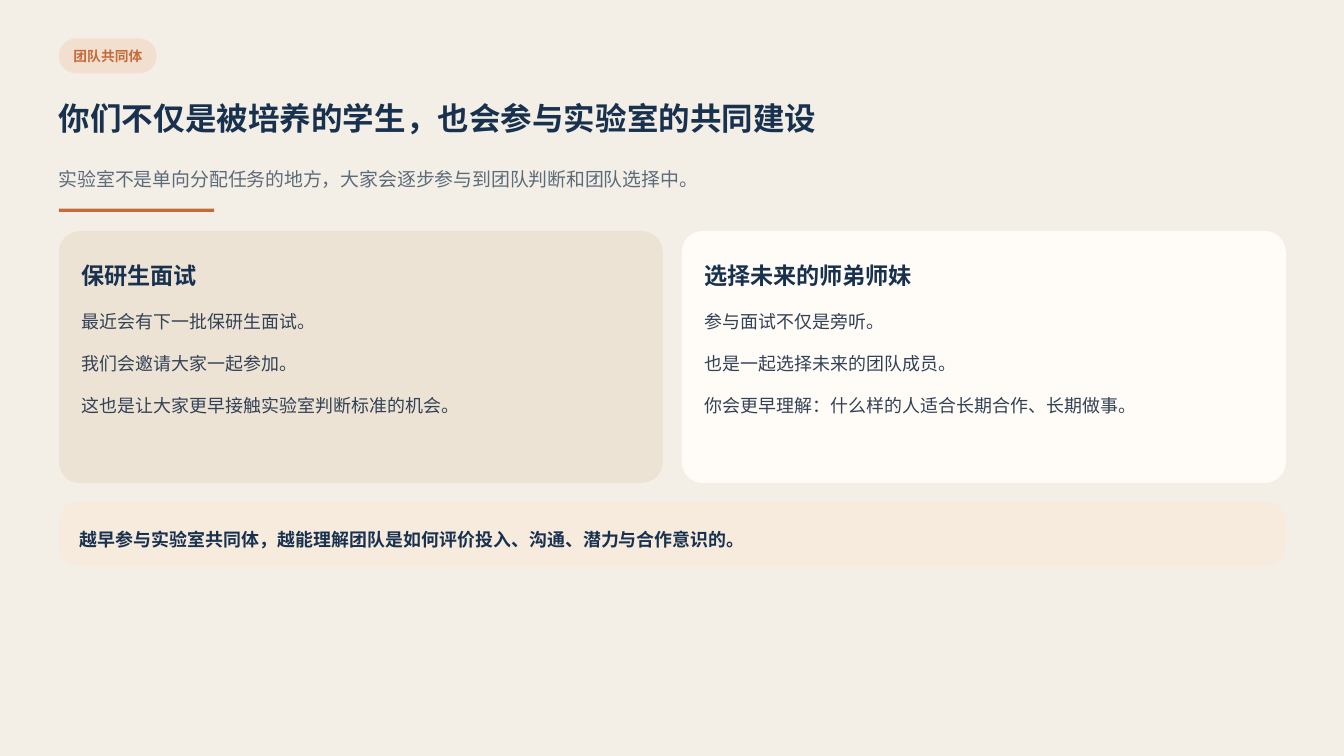
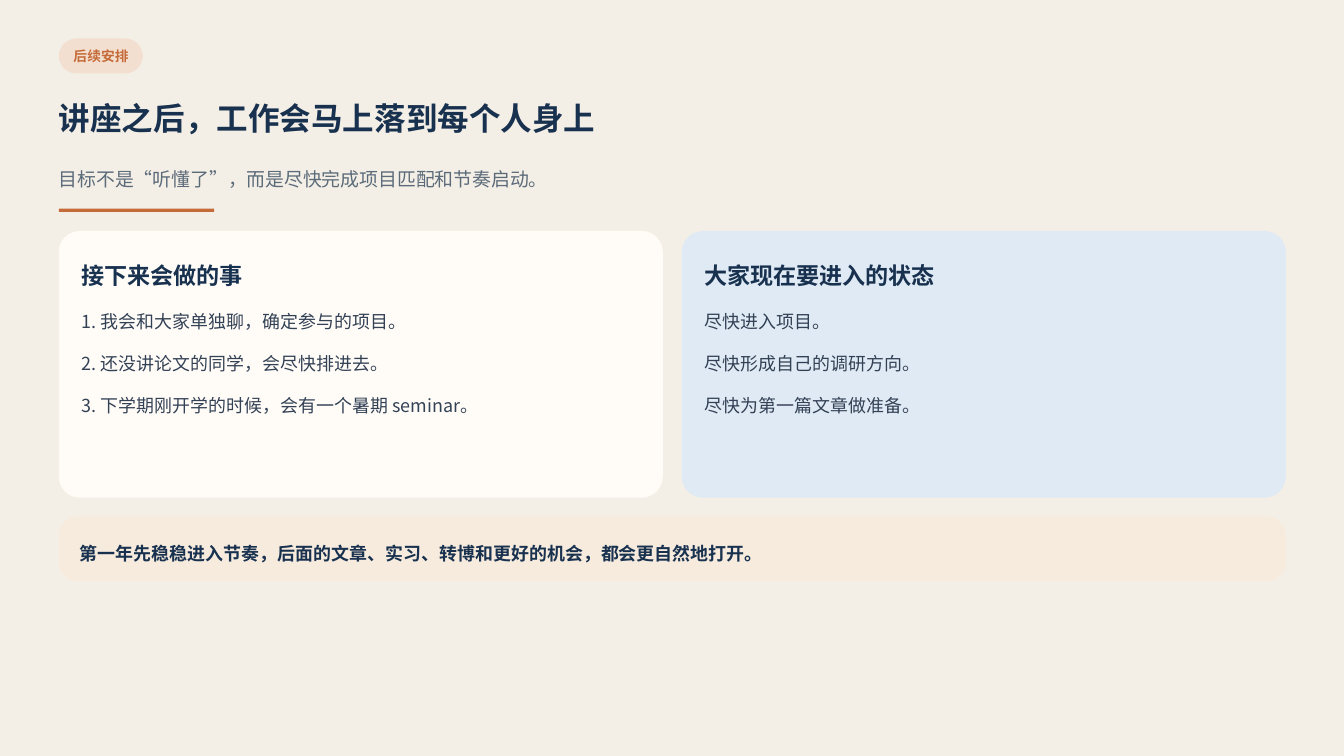
from pptx import Presentation
from pptx.dml.color import RGBColor
from pptx.enum.shapes import MSO_SHAPE
from pptx.oxml.ns import qn
from pptx.util import Pt
from lxml import etree

RECT = MSO_SHAPE.RECTANGLE
ROUND = MSO_SHAPE.ROUNDED_RECTANGLE
PX = 6350
FONT = "Noto Sans CJK SC"
COLORS = {
    "bg": "F4EFE6", "accent": "C56B39", "tag": "F3DFD0", "navy": "18314F",
    "muted": "5C6B7A", "body": "334155", "sand": "ECE3D5", "white": "FFFCF8",
    "blue": "DFEAF4", "note": "F7EBDD",
}
STYLES = {
    "tag": (1.1, "accent", {"size": Pt(9.8), "bold": True}),
    "title": (1.2, "navy", {"size": Pt(22.5), "bold": True}),
    "subtitle": (1.5, "muted", {"size": Pt(13.5), "bold": False}),
    "heading": (1.25, "navy", {"size": Pt(16.5), "bold": True}),
    "body": (1.5, "body", {"size": Pt(12.8), "bold": False}),
    "note": (1.45, "navy", {"size": Pt(12.8), "bold": True}),
}
LEFT, WIDTH, GAP = 84, 1753, 27
CARD_TOP, CARD_PAD, LINE_STEP = 330, 33, 60
CARD_W = (WIDTH - GAP) // 2
NOTE_H, NOTE_PAD = 92, 30

SLIDES = [
    {
        "tag": "团队共同体",
        "title": "你们不仅是被培养的学生，也会参与实验室的共同建设",
        "subtitle": "实验室不是单向分配任务的地方，大家会逐步参与到团队判断和团队选择中。",
        "card_h": 360,
        "cards": [
            ("sand", "保研生面试", [
                "最近会有下一批保研生面试。",
                "我们会邀请大家一起参加。",
                "这也是让大家更早接触实验室判断标准的机会。",
            ]),
            ("white", "选择未来的师弟师妹", [
                "参与面试不仅是旁听。",
                "也是一起选择未来的团队成员。",
                "你会更早理解：什么样的人适合长期合作、长期做事。",
            ]),
        ],
        "note": "越早参与实验室共同体，越能理解团队是如何评价投入、沟通、潜力与合作意识的。",
    },
    {
        "tag": "后续安排",
        "title": "讲座之后，工作会马上落到每个人身上",
        "subtitle": "目标不是“听懂了”，而是尽快完成项目匹配和节奏启动。",
        "card_h": 381,
        "cards": [
            ("white", "接下来会做的事", [
                "1. 我会和大家单独聊，确定参与的项目。",
                "2. 还没讲论文的同学，会尽快排进去。",
                "3. 下学期刚开学的时候，会有一个暑期 seminar。",
            ]),
            ("blue", "大家现在要进入的状态", [
                "尽快进入项目。",
                "尽快形成自己的调研方向。",
                "尽快为第一篇文章做准备。",
            ]),
        ],
        "note": "第一年先稳稳进入节奏，后面的文章、实习、转博和更好的机会，都会更自然地打开。",
    },
]


def add_panel(s, x, y, w, h, color, radius=0):
    sp = s.shapes.add_shape(ROUND if radius else RECT, x * PX, y * PX, w * PX, h * PX)
    sp.shadow.inherit = False
    sp.fill.solid()
    sp.fill.fore_color.rgb = RGBColor.from_string(COLORS[color])
    sp.line.fill.background()
    if radius:
        sp.adjustments[0] = radius / min(w, h)


def add_text(s, x, y, w, h, text, style):
    spacing, color, formats = STYLES[style]
    tf = s.shapes.add_textbox(x * PX, y * PX, w * PX, h * PX).text_frame
    tf.word_wrap = True
    for side in ("left", "top", "right", "bottom"):
        setattr(tf, f"margin_{side}", 0)
    p = tf.paragraphs[0]
    p.line_spacing = spacing
    r = p.add_run()
    r.text = text
    r.font.name = FONT
    r.font.color.rgb = RGBColor.from_string(COLORS[color])
    for name, value in formats.items():
        setattr(r.font, name, value)
    etree.SubElement(r.font._element, qn("a:ea"), typeface=FONT)


prs = Presentation()
prs.slide_width = 1920 * PX
prs.slide_height = 1080 * PX

for data in SLIDES:
    s = prs.slides.add_slide(prs.slide_layouts[6])
    s.background.fill.solid()
    s.background.fill.fore_color.rgb = RGBColor.from_string(COLORS["bg"])

    tag_w = 20 * len(data["tag"])
    add_panel(s, LEFT, 55, tag_w + 40, 50, "tag", 25)
    add_text(s, LEFT + 21, 66, tag_w, 26, data["tag"], "tag")
    add_text(s, LEFT, 131, WIDTH, 65, data["title"], "title")
    add_text(s, LEFT, 223, WIDTH, 49, data["subtitle"], "subtitle")
    add_panel(s, LEFT, 298, 222, 5, "accent")

    text_w = CARD_W - 2 * CARD_PAD
    for i, (color, heading, lines) in enumerate(data["cards"]):
        x = LEFT + i * (CARD_W + GAP)
        add_panel(s, x, CARD_TOP, CARD_W, data["card_h"], color, 30)
        add_text(s, x + CARD_PAD, CARD_TOP + CARD_PAD, text_w, 49, heading, "heading")
        for j, line in enumerate(lines):
            y = CARD_TOP + 98 + j * LINE_STEP
            add_text(s, x + CARD_PAD, y, text_w, 46, line, "body")

    note_top = CARD_TOP + data["card_h"] + GAP
    add_panel(s, LEFT, note_top, WIDTH, NOTE_H, "note", 27)
    add_text(s, LEFT + NOTE_PAD, note_top + 24, WIDTH - 2 * NOTE_PAD, 45, data["note"], "note")

prs.save("out.pptx")
